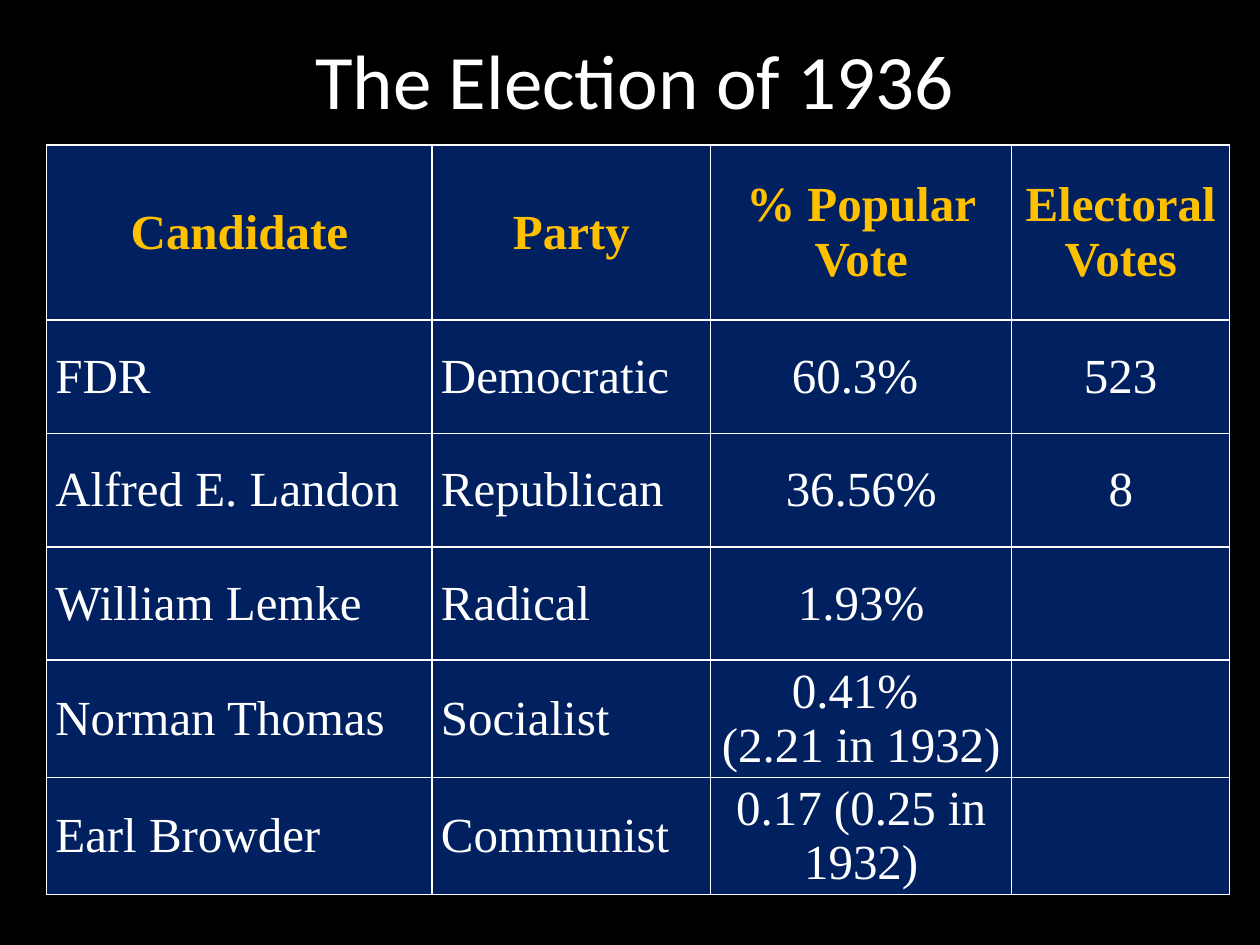
import pptx
import pptx.util
import pptx.dml.color
import pptx.enum.text
import pptx.oxml
import pptx.oxml.ns
from pptx.util import Inches

RGBColor = pptx.dml.color.RGBColor
PP_ALIGN = pptx.enum.text.PP_ALIGN
MSO_ANCHOR = pptx.enum.text.MSO_ANCHOR

BLACK = RGBColor(0x00, 0x00, 0x00)
WHITE = RGBColor(0xFF, 0xFF, 0xFF)
NAVY = RGBColor(0x00, 0x20, 0x60)
GOLD = RGBColor(0xFF, 0xC0, 0x00)

COLUMN_WIDTHS = [3.06, 2.21, 2.39, 1.73]
ROW_HEIGHTS = [1.39, 0.9, 0.9, 0.9, 0.93, 0.93]
RESULTS = [
    ["Candidate", "Party", "% Popular\vVote", "Electoral Votes"],
    ["FDR", "Democratic", "60.3% ", "523"],
    ["Alfred E. Landon", "Republican", "36.56%", "8"],
    ["William Lemke", "Radical", "1.93%", ""],
    ["Norman Thomas", "Socialist", "0.41% \v(2.21 in 1932)", ""],
    ["Earl Browder", "Communist", "0.17 (0.25 in 1932)", ""],
]


def set_font(p, name, size, color, bold=False):
    p.font.name = name
    p.font.size = pptx.util.Pt(size)
    p.font.color.rgb = color
    p.font.bold = bold


def add_title(s, text, left, top, width, height):
    tf = s.shapes.add_textbox(left, top, width, height).text_frame
    tf.word_wrap = True
    tf.vertical_anchor = MSO_ANCHOR.MIDDLE
    tf.text = text
    p = tf.paragraphs[0]
    p.alignment = PP_ALIGN.CENTER
    set_font(p, "Calibri", 44, WHITE)


def add_borders(cell, color, width):
    tc_pr = cell._tc.get_or_add_tcPr()
    for i, side in enumerate(("lnL", "lnR", "lnT", "lnB")):
        tc_pr.insert(i, pptx.oxml.parse_xml(
            f'<a:{side} {pptx.oxml.ns.nsdecls("a")} w="{pptx.util.Pt(width)}">'
            f'<a:solidFill><a:srgbClr val="{color}"/></a:solidFill></a:{side}>'))


def fill_cell(cell, text, header, centered):
    cell.fill.solid()
    cell.fill.fore_color.rgb = NAVY
    add_borders(cell, WHITE, 1)
    cell.margin_left = cell.margin_right = Inches(0.07)
    cell.margin_top = cell.margin_bottom = 0
    cell.vertical_anchor = MSO_ANCHOR.MIDDLE
    cell.text_frame.text = text
    p = cell.text_frame.paragraphs[0]
    p.alignment = PP_ALIGN.CENTER if centered else PP_ALIGN.LEFT
    set_font(p, "Times New Roman", 28, GOLD if header else WHITE, header)


def add_results(s, left, top, width, height):
    table = s.shapes.add_table(
        len(RESULTS), len(COLUMN_WIDTHS), left, top, width, height).table
    for column, size in zip(table.columns, COLUMN_WIDTHS):
        column.width = Inches(size)
    for row, size in zip(table.rows, ROW_HEIGHTS):
        row.height = Inches(size)
    for i, values in enumerate(RESULTS):
        for j, text in enumerate(values):
            fill_cell(table.cell(i, j), text, i == 0, i == 0 or j >= 2)


def main():
    prs = pptx.Presentation()
    prs.slide_width = Inches(10)
    prs.slide_height = Inches(7.5)
    s = prs.slides.add_slide(prs.slide_layouts[6])
    s.background.fill.solid()
    s.background.fill.fore_color.rgb = BLACK
    add_results(s, Inches(0.37), Inches(1.15),
                Inches(sum(COLUMN_WIDTHS)), Inches(sum(ROW_HEIGHTS)))
    add_title(s, "The Election of 1936", Inches(0.79), 0, Inches(8.5), Inches(1.25))
    prs.save("out.pptx")


if __name__ == "__main__":
    main()
